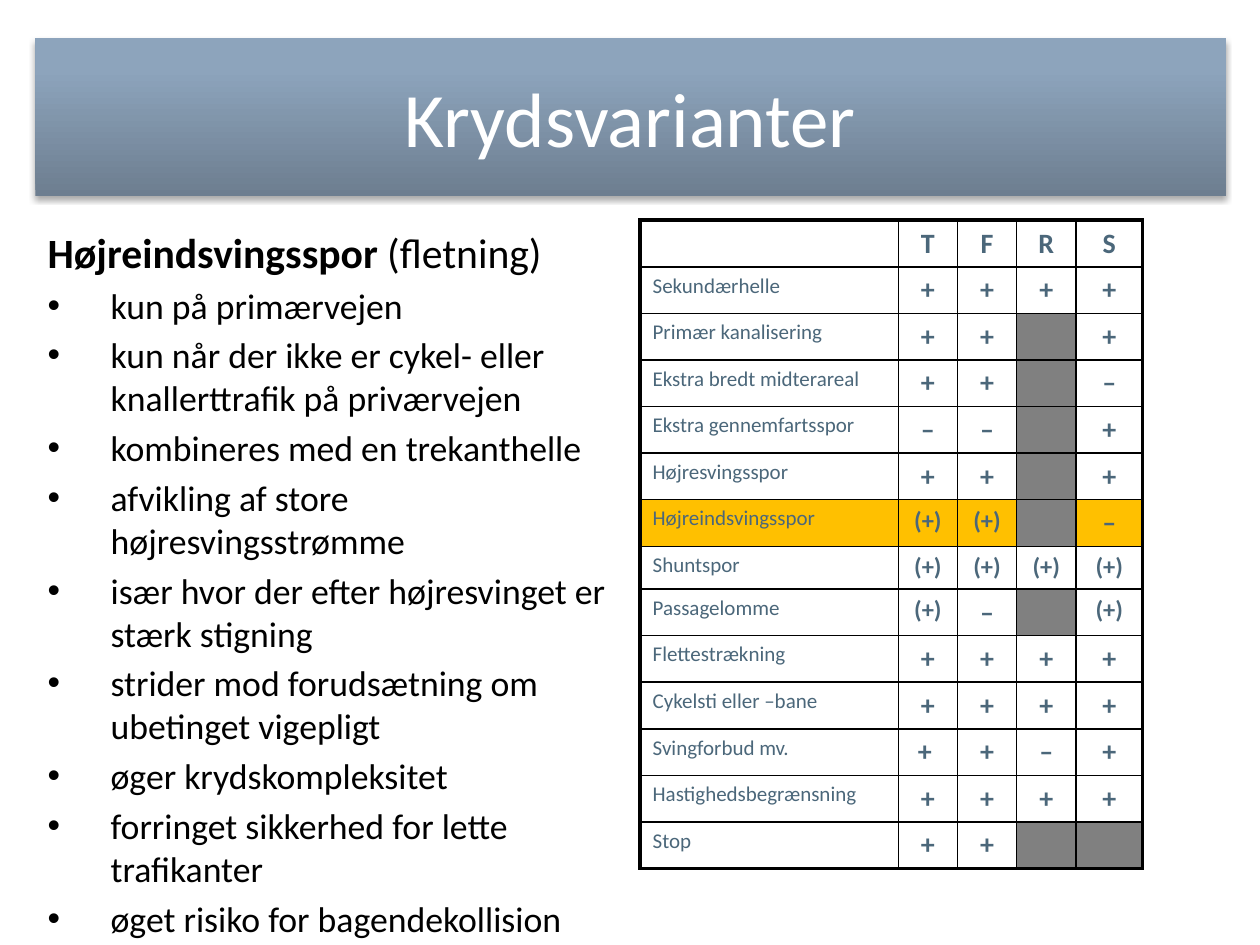
import dataclasses

import lxml.etree
import pptx
import pptx.dml.color
import pptx.enum.shapes
import pptx.enum.text
import pptx.oxml.ns
import pptx.util

WIDTH, HEIGHT = pptx.util.Inches(10), pptx.util.Inches(7.5)
FONT = "Calibri"
BLACK, WHITE, SLATE, GREY, AMBER = "000000", "FFFFFF", "4B677A", "808080", "FFC000"
THIN, THICK = 1, 2.25
CENTER = pptx.enum.text.PP_ALIGN.CENTER


@dataclasses.dataclass(frozen=True)
class Area:
    """A rectangle given as shares of the slide's size."""
    left: float
    top: float
    width: float
    height: float

    def lengths(self) -> tuple[int, int, int, int]:
        return (round(self.left * WIDTH), round(self.top * HEIGHT),
                round(self.width * WIDTH), round(self.height * HEIGHT))


@dataclasses.dataclass(frozen=True)
class Variant:
    """A table row; a mark of None is a greyed-out cell."""
    label: str
    marks: tuple[str | None, ...]
    fill: str = WHITE
    height: float = 0.37


TITLE_AREA = Area(0.028, 0.04, 0.945, 0.167)
BODY_AREA = Area(0.028, 0.233, 0.464, 0.719)
TABLE_AREA = Area(0.508, 0.233, 0.4, 0.69)
COLUMN_WIDTHS = (2.05, 0.47, 0.47, 0.47, 0.53)

BULLETS = (
    "kun på primærvejen",
    "kun når der ikke er cykel- eller knallerttrafik på priværvejen",
    "kombineres med en trekanthelle",
    "afvikling af store højresvingsstrømme",
    "især hvor der efter højresvinget er stærk stigning",
    "strider mod forudsætning om ubetinget vigepligt",
    "øger krydskompleksitet",
    "forringet sikkerhed for lette trafikanter",
    "øget risiko for bagendekollision",
)

VARIANTS = (
    Variant("", ("T", "F", "R", "S")),
    Variant("Sekundærhelle", ("+", "+", "+", "+")),
    Variant("Primær kanalisering", ("+", "+", None, "+")),
    Variant("Ekstra bredt midterareal", ("+", "+", None, "–")),
    Variant("Ekstra gennemfartsspor", ("–", "–", None, "+")),
    Variant("Højresvingsspor", ("+", "+", None, "+")),
    Variant("Højreindsvingsspor", ("(+)", "(+)", None, "–"), AMBER),
    Variant("Shuntspor", ("(+)", "(+)", "(+)", "(+)"), height=0.34),
    Variant("Passagelomme", ("(+)", "–", None, "(+)")),
    Variant("Flettestrækning", ("+", "+", "+", "+")),
    Variant("Cykelsti eller –bane", ("+", "+", "+", "+")),
    Variant("Svingforbud mv.", ("+ ", "+", "–", "+")),
    Variant("Hastighedsbegrænsning", ("+", "+", "+", "+")),
    Variant("Stop", ("+", "+", None, None)),
)


def rgb(color: str) -> pptx.dml.color.RGBColor:
    return pptx.dml.color.RGBColor.from_string(color)


def add_element(parent, tag: str, **attributes):
    return lxml.etree.SubElement(parent, pptx.oxml.ns.qn(tag), attributes)


def set_font(font, size: float, color: str, bold: bool = False) -> None:
    font.name, font.size, font.bold = FONT, pptx.util.Pt(size), bold
    font.color.rgb = rgb(color)


def draw_title(page) -> None:
    band = page.shapes.add_shape(
        pptx.enum.shapes.MSO_SHAPE.RECTANGLE, *TITLE_AREA.lengths())
    band.line.fill.background()
    # Dark at the bottom, light from four fifths of the height upwards
    band.fill.gradient()
    band.fill.gradient_angle = 90
    for stop, (position, color) in zip(
            band.fill.gradient_stops, ((0, "6D7E90"), (0.8, "8DA4BC"))):
        stop.position, stop.color.rgb = position, rgb(color)
    # Soft shadow below the band
    band.shadow.inherit = False
    effects = band._element.spPr.find(pptx.oxml.ns.qn("a:effectLst"))
    shadow = add_element(effects, "a:outerShdw", blurRad="40000", dist="23000",
                         dir="5400000", rotWithShape="0")
    shade = add_element(shadow, "a:srgbClr", val=BLACK)
    add_element(shade, "a:alpha", val="35000")

    band.text_frame.vertical_anchor = pptx.enum.text.MSO_ANCHOR.MIDDLE
    para = band.text_frame.paragraphs[0]
    para.text, para.alignment = "Krydsvarianter", CENTER
    set_font(para.font, 44, WHITE)


def draw_body(page) -> None:
    frame = page.shapes.add_textbox(*BODY_AREA.lengths()).text_frame
    frame.word_wrap = True
    heading = frame.paragraphs[0]
    for text, bold in (("Højreindsvingsspor ", True), ("(fletning)", False)):
        span = heading.add_run()
        span.text = text
        set_font(span.font, 23.8, BLACK, bold)
    indent = pptx.util.Inches(0.5)
    for text in BULLETS:
        para = frame.add_paragraph()
        para.text = text
        para.space_before = pptx.util.Pt(4)
        properties = para._p.get_or_add_pPr()
        properties.set("marL", str(indent))
        properties.set("indent", str(-indent))
        add_element(properties, "a:buFont", typeface="Arial")
        add_element(properties, "a:buChar", char="•")
        set_font(para.font, 20.4, BLACK)


def style_cell(cell, fill: str, borders: dict[str, float]) -> None:
    properties = cell._tc.get_or_add_tcPr()
    for side, width in borders.items():
        line = add_element(properties, f"a:ln{side}", w=str(pptx.util.Pt(width)))
        add_element(add_element(line, "a:solidFill"), "a:srgbClr", val=BLACK)
    cell.fill.solid()
    cell.fill.fore_color.rgb = rgb(fill)


def write_cell(cell, text: str | None, size: float, bold: bool) -> None:
    para = cell.text_frame.paragraphs[0]
    if text:
        para.text = text
        set_font(para.font, size, SLATE, bold)
    else:
        # Keeps an empty cell from stretching its row
        add_element(para._p, "a:endParaRPr", sz="1200")
    if bold:
        para.alignment = CENTER


def draw_table(page) -> None:
    last_row, last_column = len(VARIANTS) - 1, len(COLUMN_WIDTHS) - 1
    table = page.shapes.add_table(
        len(VARIANTS), len(COLUMN_WIDTHS), *TABLE_AREA.lengths()).table
    table.first_row = table.horz_banding = False
    for column, width in zip(table.columns, COLUMN_WIDTHS):
        column.width = pptx.util.Inches(width)
    for i, variant in enumerate(VARIANTS):
        table.rows[i].height = pptx.util.Inches(variant.height)
        for j, text in enumerate((variant.label, *variant.marks)):
            cell = table.cell(i, j)
            outer = {"L": j == 0, "R": j == last_column,
                     "T": i == 0, "B": i == last_row}
            style_cell(cell, GREY if text is None else variant.fill,
                       {side: THICK if edge else THIN for side, edge in outer.items()})
            mark_size = 14 if text == "(+)" else 16
            write_cell(cell, text, mark_size if j else 12, bold=j > 0)


def main() -> None:
    deck = pptx.Presentation()
    deck.slide_width, deck.slide_height = WIDTH, HEIGHT
    page = deck.slides.add_slide(deck.slide_layouts[6])
    draw_title(page)
    draw_body(page)
    draw_table(page)
    deck.save("out.pptx")


if __name__ == "__main__":
    main()
